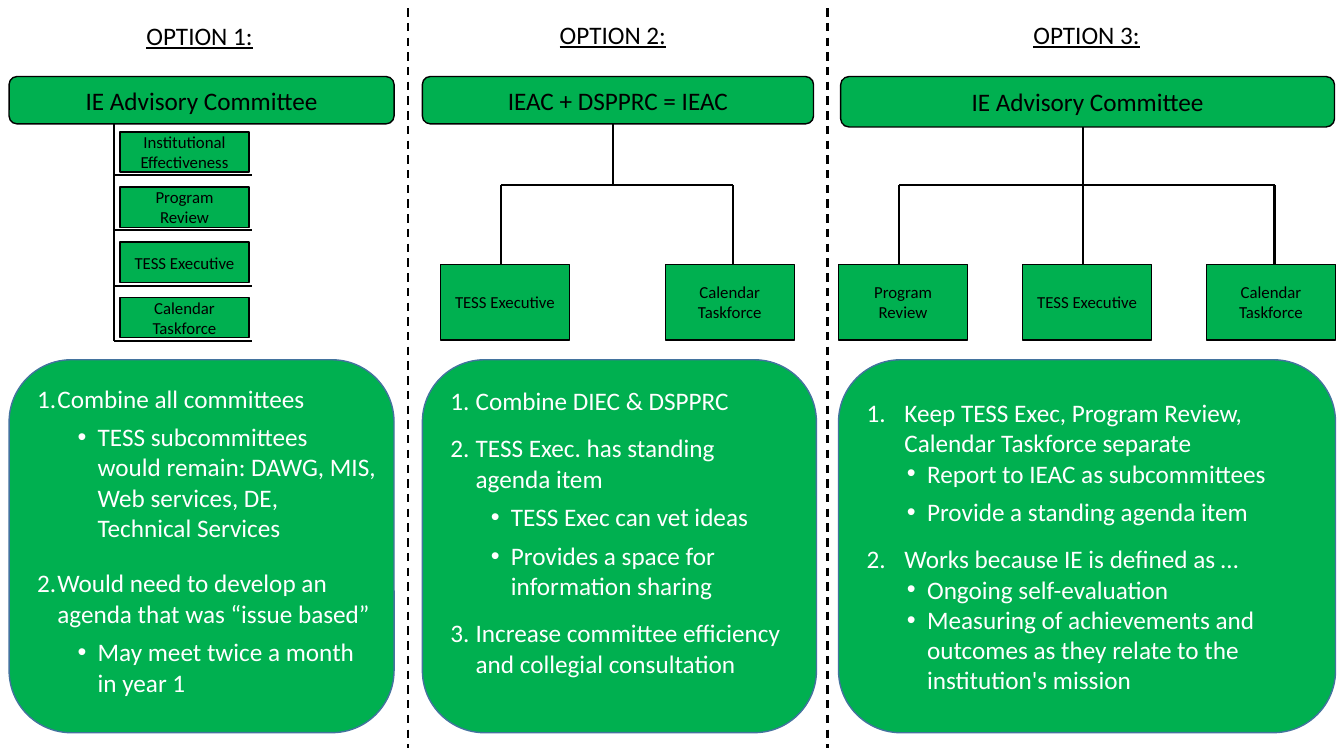
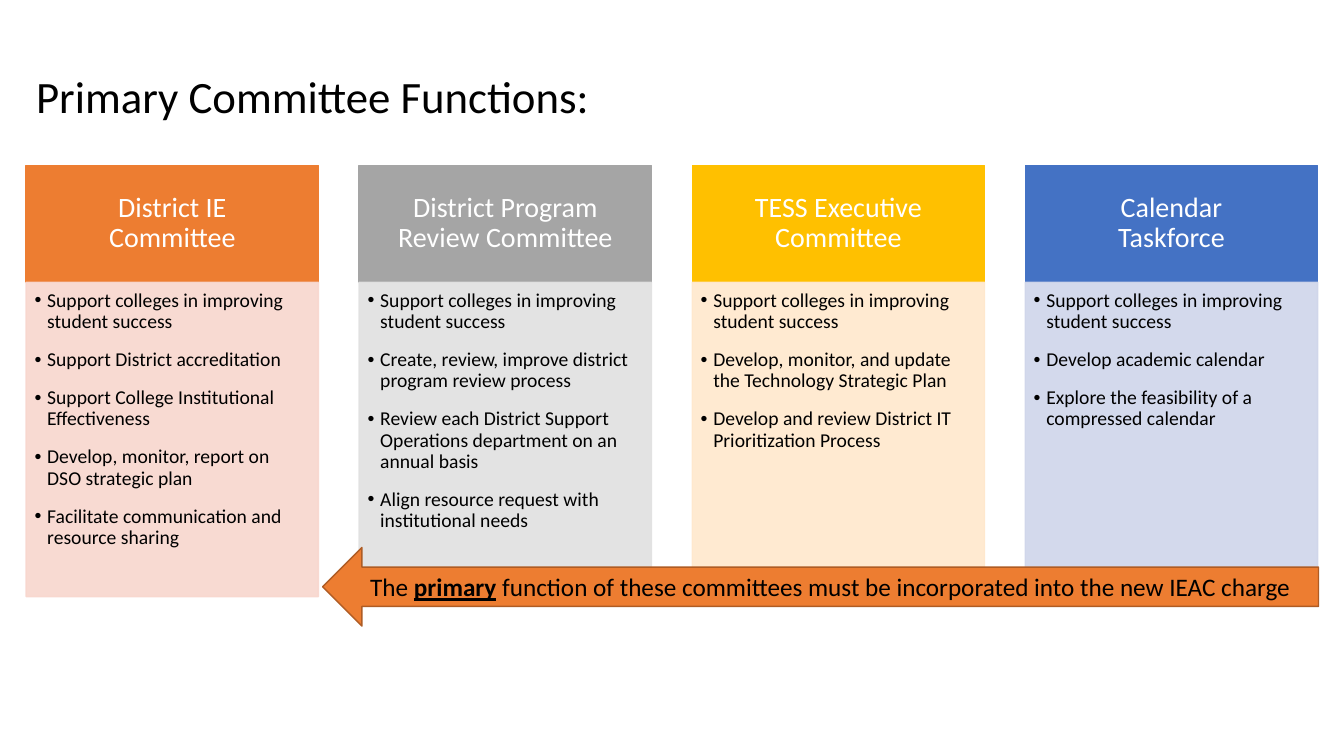
from dataclasses import dataclass
from typing import NamedTuple

from lxml.etree import SubElement
from pptx import Presentation
from pptx.dml.color import RGBColor as Color
from pptx.enum.dml import MSO_LINE as Dash
from pptx.enum.shapes import MSO_CONNECTOR as Link, MSO_SHAPE as Kind
from pptx.enum.text import MSO_ANCHOR as Anchor, PP_ALIGN as Align
from pptx.oxml.ns import qn
from pptx.shapes.autoshape import Shape
from pptx.slide import Slide
from pptx.text.text import TextFrame as Frame
from pptx.util import Pt


@dataclass(frozen=True)
class Theme:
    font: str = "Calibri"
    green: str = "00B050"
    black: str = "000000"
    white: str = "FFFFFF"
    edge: str = "43739E"
    orange: str = "ED7D31"
    rust: str = "AF5C24"
    title: int = 32
    head: int = 20
    body: int = 18
    list: int = 14
    small: int = 12


class Box(NamedTuple):
    left: float
    top: float
    width: float
    height: float


class Pad(NamedTuple):
    left: float = 7.2
    top: float = 3.6
    right: float = 7.2
    bottom: float = 3.6


class Item(NamedTuple):
    text: str
    after: float = 0
    before: float = 0
    left: float = 0
    hang: float = 0
    mark: str = ""
    level: int = 0
    space: float = 1


class Leaf(NamedTuple):
    text: str
    left: float
    drop: float


class Option(NamedTuple):
    name: str
    label: Box
    chair: str
    band: Box
    trunk: float
    leaves: list[Leaf]
    panel: Box
    pad: Pad
    anchor: Anchor
    items: list[Item]


class Column(NamedTuple):
    name: str
    dark: str
    light: str
    tasks: list[str]


THEME = Theme()
LEAF_W = 92.2
LEAF_TOP = 188.8
BAR_Y = 132.3
RUNGS = ["Institutional Effectiveness", "Program Review", "TESS Executive", "Calendar Taskforce"]


def step(text: str, left: float, after: float = 0, before: float = 0) -> Item:
    return Item(text, after, before, left, left, "1")


def dot(text: str, after: float = 0) -> Item:
    return Item(text, after, 0, 43.2, 14.4, "•", 1)


def task(text: str) -> Item:
    return Item(text, 12, 0, 9, 9, "•", 1, 0.9)


OPTIONS = [
    Option("OPTION 1:", Box(6.5, 10.8, 272.2, 28.8),
           "IE Advisory Committee", Box(6.5, 54.7, 275, 33.8), 81.4, [],
           Box(6.5, 257, 275, 266.4), Pad(right=0), Anchor.TOP,
           [step("Combine all committees", 14.4, 6),
            dot("TESS subcommittees would remain: DAWG, MIS, Web services, DE, Technical Services", 6),
            step("Would need to develop an agenda that was “issue based”", 14.4, 6, 12),
            dot("May meet twice a month in year 1", 6)]),
    Option("OPTION 2:", Box(301.7, 10.1, 272.2, 28.8),
           "IEAC + DSPPRC = IEAC", Box(301.7, 54.7, 279.4, 33.8), 437.8,
           [Leaf("TESS Executive", 314.6, 357.8), Leaf("Calendar Taskforce", 475.2, 523.4)],
           Box(301.7, 257, 281.5, 266.4), Pad(bottom=24), Anchor.MIDDLE,
           [step("Combine DIEC & DSPPRC", 18, 12),
            step("TESS Exec. has standing agenda item", 18, 6),
            dot("TESS Exec can vet ideas", 6),
            dot("Provides a space for information sharing", 12),
            step("Increase committee efficiency and collegial consultation", 18, 6)]),
    Option("OPTION 3:", Box(640, 10.1, 272.2, 28.8),
           "IE Advisory Committee", Box(600.5, 54.7, 352.8, 36), 773.3,
           [Leaf("Program Review", 599, 642.2), Leaf("TESS Executive", 730.4, 773.3),
            Leaf("Calendar Taskforce", 861.8, 910.4)],
           Box(599, 257, 355, 266.4), Pad(), Anchor.MIDDLE,
           [step("Keep TESS Exec, Program Review, Calendar Taskforce separate", 27),
            dot("Report to IEAC as subcommittees", 6),
            dot("Provide a standing agenda item", 12),
            step("Works because IE is defined as …", 27),
            dot("Ongoing self-evaluation"),
            dot("Measuring of achievements and outcomes as they relate to the institution's mission")]),
]

SHARED = "Support colleges in improving student success"
COLUMNS = [
    Column("District IE\vCommittee", THEME.orange, "F8D7CE",
           ["Support District accreditation", "Support College Institutional Effectiveness",
            "Develop, monitor, report on DSO strategic plan",
            "Facilitate communication and resource sharing"]),
    Column("District Program Review Committee", "A5A5A5", "E1E1E1",
           ["Create, review, improve district program review process",
            "Review each District Support Operations department on an annual basis",
            "Align resource request with institutional needs"]),
    Column("TESS Executive Committee", "FFC000", "FFE8CC",
           ["Develop, monitor, and update the Technology Strategic Plan",
            "Develop and review District IT Prioritization Process"]),
    Column("Calendar\vTaskforce", "4472C4", "CFD5EA",
           ["Develop academic calendar", "Explore the feasibility of a compressed calendar"]),
]


def write(frame: Frame, items: list[Item], size: int, color: str, align: Align,
          pad: Pad = Pad(), anchor: Anchor = Anchor.MIDDLE) -> None:
    frame.word_wrap = True
    frame.vertical_anchor = anchor
    frame.margin_left, frame.margin_top, frame.margin_right, frame.margin_bottom = map(Pt, pad)
    for index, item in enumerate(items):
        para = frame.add_paragraph() if index else frame.paragraphs[0]
        para.text = item.text
        para.alignment = align
        para.level = item.level
        para.line_spacing = item.space
        para.space_before, para.space_after = Pt(item.before), Pt(item.after)
        if item.mark:
            props = para._p.get_or_add_pPr()
            props.set("marL", str(Pt(item.left)))
            props.set("indent", str(-Pt(item.hang)))
            if item.mark == "•":
                SubElement(props, qn("a:buFont")).set("typeface", "Arial")
                SubElement(props, qn("a:buChar")).set("char", item.mark)
            else:
                SubElement(props, qn("a:buAutoNum")).set("type", "arabicPeriod")
        for run in para.runs:
            run.font.name = THEME.font
            run.font.size = Pt(size)
            run.font.color.rgb = Color.from_string(color)


def block(slide: Slide, kind: Kind, box: Box, fill: str, line: str) -> Shape:
    shape = slide.shapes.add_shape(kind, *map(Pt, box))
    shape.shadow.inherit = False
    shape.fill.solid()
    shape.fill.fore_color.rgb = Color.from_string(fill)
    shape.line.color.rgb = Color.from_string(line)
    shape.line.width = Pt(1)
    return shape


def label(slide: Slide, box: Box, text: str, size: int, align: Align) -> Frame:
    frame = slide.shapes.add_textbox(*map(Pt, box)).text_frame
    write(frame, [Item(text)], size, THEME.black, align, anchor=Anchor.TOP)
    return frame


def node(slide: Slide, kind: Kind, box: Box, text: str, size: int) -> None:
    shape = block(slide, kind, box, THEME.green, THEME.black)
    write(shape.text_frame, [Item(text)], size, THEME.black, Align.CENTER)


def rule(slide: Slide, x: float, y: float, end_x: float, end_y: float,
         width: float = 1.5, dash: bool = False) -> None:
    line = slide.shapes.add_connector(Link.STRAIGHT, Pt(x), Pt(y), Pt(end_x), Pt(end_y))
    line.line.color.rgb = Color.from_string(THEME.black)
    line.line.width = Pt(width)
    if dash:
        line.line.dash_style = Dash.DASH
    SubElement(line._element.spPr, qn("a:effectLst"))


def ladder(slide: Slide, x: float, top: float) -> None:
    pitch, first = 39.4, 125.2
    rule(slide, x, top, x, first + pitch * (len(RUNGS) - 1))
    for index, text in enumerate(RUNGS):
        y = first + pitch * index
        rule(slide, x, y, 180, y)
        node(slide, Kind.RECTANGLE, Box(85.7, y - 31, LEAF_W, 28.8), text, THEME.small)


def tree(slide: Slide, trunk: float, top: float, leaves: list[Leaf]) -> None:
    rule(slide, trunk, top, trunk, BAR_Y)
    rule(slide, leaves[0].drop, BAR_Y, leaves[-1].drop, BAR_Y, 1.25)
    for leaf in leaves:
        rule(slide, leaf.drop, BAR_Y, leaf.drop, LEAF_TOP)
        node(slide, Kind.RECTANGLE, Box(leaf.left, LEAF_TOP, LEAF_W, 54), leaf.text, THEME.small)


def draw_option(slide: Slide, option: Option) -> None:
    name = label(slide, option.label, option.name, THEME.body, Align.CENTER)
    name.paragraphs[0].runs[0].font.underline = True
    node(slide, Kind.ROUNDED_RECTANGLE, option.band, option.chair, THEME.body)
    base = option.band.top + option.band.height
    if option.leaves:
        tree(slide, option.trunk, base, option.leaves)
    else:
        ladder(slide, option.trunk, base)
    panel = block(slide, Kind.ROUNDED_RECTANGLE, option.panel, THEME.green, THEME.edge)
    write(panel.text_frame, option.items, THEME.body, THEME.white, Align.LEFT,
          option.pad, option.anchor)


def draw_column(slide: Slide, left: float, column: Column) -> None:
    top, width, split = 118.1, 208.8, 201.6
    head = block(slide, Kind.RECTANGLE, Box(left, top, width, split - top),
                 column.dark, column.dark)
    write(head.text_frame, [Item(column.name, space=0.9)], THEME.head, THEME.white,
          Align.CENTER, Pad(11.5, 6.5, 11.5, 6.5))
    body = block(slide, Kind.RECTANGLE, Box(left, split, width, 224.6),
                 column.light, column.light)
    for tint in body._element.spPr.iter(qn("a:srgbClr")):
        SubElement(tint, qn("a:alpha")).set("val", "90000")
    write(body.text_frame, [task(text) for text in [SHARED, *column.tasks]], THEME.list,
          THEME.black, Align.LEFT, Pad(6, 6, 8, 9), Anchor.TOP)


def draw_arrow(slide: Slide) -> None:
    arrow = block(slide, Kind.LEFT_ARROW, Box(230.4, 391, 711.4, 56.2), THEME.orange, THEME.rust)
    frame = arrow.text_frame
    para = frame.paragraphs[0]
    write(frame, [Item("The ")], THEME.body, THEME.black, Align.CENTER)
    for text, strong in [("primary", True),
                         (" function of these committees must be incorporated into the new IEAC charge", False)]:
        run = para.add_run()
        run.text = text
        run.font.name = THEME.font
        run.font.size = Pt(THEME.body)
        run.font.color.rgb = Color.from_string(THEME.black)
        run.font.bold = run.font.underline = strong


def main() -> None:
    deck = Presentation()
    deck.slide_width, deck.slide_height = Pt(960), Pt(540)
    blank = deck.slide_layouts[6]

    first = deck.slides.add_slide(blank)
    for option in OPTIONS:
        draw_option(first, option)
    for x in (291.6, 591.1):
        rule(first, x, 5.8, x, 534, dash=True)

    second = deck.slides.add_slide(blank)
    for index, column in enumerate(COLUMNS):
        draw_column(second, 18.7 + 237.9 * index, column)
    label(second, Box(18.7, 45.4, 923, 46), "Primary Committee Functions:", THEME.title, Align.LEFT)
    draw_arrow(second)

    deck.save("out.pptx")


if __name__ == "__main__":
    main()
